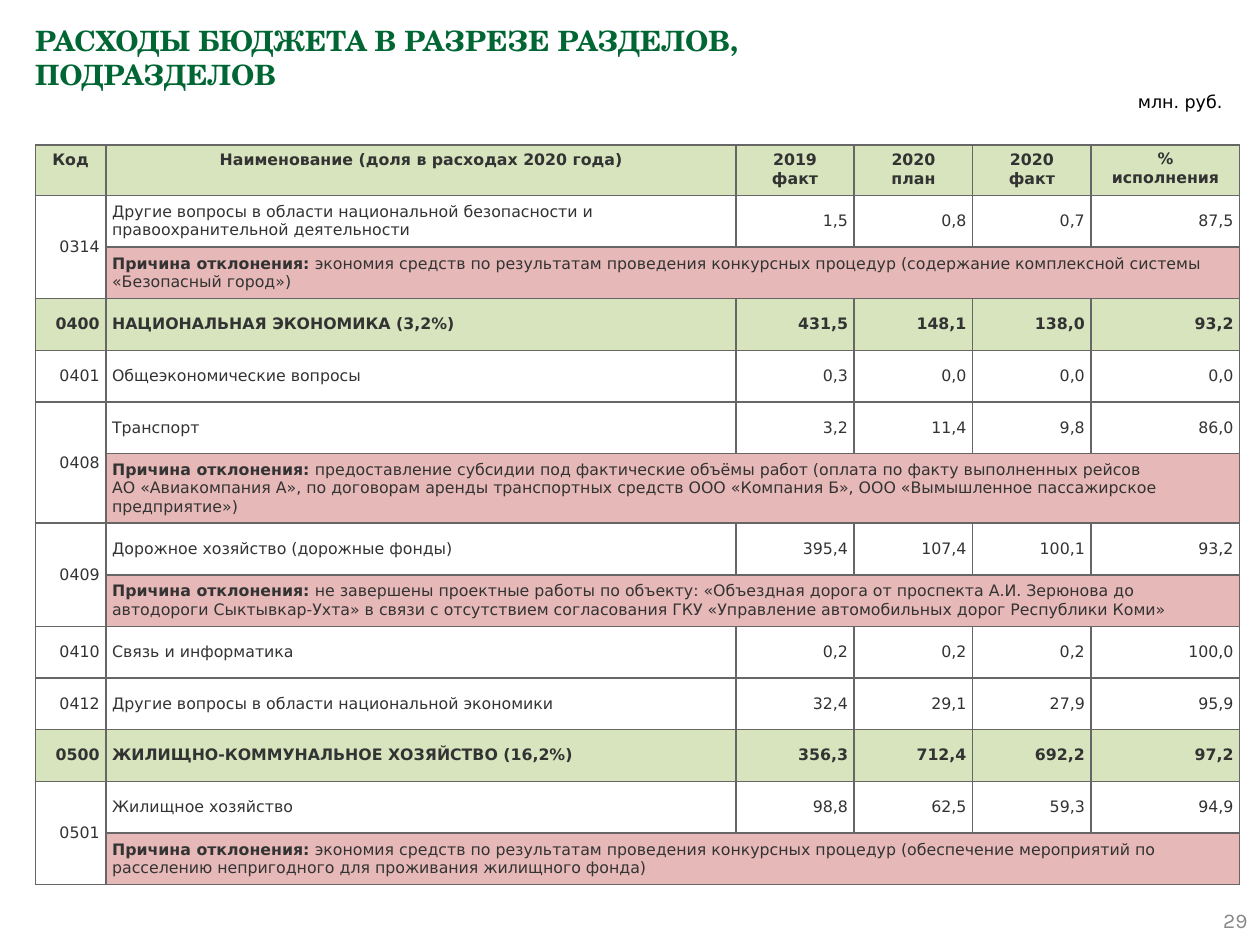
from lxml.etree import SubElement
from pptx import Presentation
from pptx.dml.color import RGBColor
from pptx.enum.shapes import MSO_SHAPE
from pptx.enum.text import MSO_ANCHOR, PP_ALIGN
from pptx.oxml.ns import qn
from pptx.util import Inches, Pt

# Content
TITLE = "РАСХОДЫ БЮДЖЕТА В РАЗРЕЗЕ РАЗДЕЛОВ, ПОДРАЗДЕЛОВ"
UNIT = "млн. руб."
PAGE_NUMBER = "29"
HEADERS = ["Код", "Наименование (доля в расходах 2020 года)",
           "2019\nфакт", "2020\nплан", "2020\nфакт", "%\nисполнения"]
REASON_LABEL = "Причина отклонения: "

# Kind of row, cells, reason for the deviation
ENTRIES = [
    ("item", ["0314", "Другие вопросы в области национальной безопасности и "
              "правоохранительной деятельности", "1,5", "0,8", "0,7", "87,5"],
     "экономия средств по результатам проведения конкурсных процедур "
     "(содержание комплексной системы «Безопасный город»)"),
    ("section", ["0400", "НАЦИОНАЛЬНАЯ ЭКОНОМИКА (3,2%)",
                 "431,5", "148,1", "138,0", "93,2"], None),
    ("item", ["0401", "Общеэкономические вопросы", "0,3", "0,0", "0,0", "0,0"], None),
    ("item", ["0408", "Транспорт", "3,2", "11,4", "9,8", "86,0"],
     "предоставление субсидии под фактические объёмы работ "
     "(оплата по факту выполненных рейсов\n"
     "АО «Авиакомпания А», по договорам аренды транспортных средств "
     "ООО «Компания Б», ООО «Вымышленное пассажирское предприятие»)"),
    ("item", ["0409", "Дорожное хозяйство (дорожные фонды)",
              "395,4", "107,4", "100,1", "93,2"],
     "не завершены проектные работы по объекту: «Объездная дорога от проспекта "
     "А.И. Зерюнова до автодороги Сыктывкар-Ухта» в связи с отсутствием "
     "согласования ГКУ «Управление автомобильных дорог Республики Коми»"),
    ("item", ["0410", "Связь и информатика", "0,2", "0,2", "0,2", "100,0"], None),
    ("item", ["0412", "Другие вопросы в области национальной экономики",
              "32,4", "29,1", "27,9", "95,9"], None),
    ("section", ["0500", "ЖИЛИЩНО-КОММУНАЛЬНОЕ ХОЗЯЙСТВО (16,2%)",
                 "356,3", "712,4", "692,2", "97,2"], None),
    ("item", ["0501", "Жилищное хозяйство", "98,8", "62,5", "59,3", "94,9"],
     "экономия средств по результатам проведения конкурсных процедур "
     "(обеспечение мероприятий по расселению непригодного для проживания "
     "жилищного фонда)"),
]

# Theme: text styles are font, size, colour
THEME = {
    "title": ("TeX Gyre Schola", 16, "006633"),
    "table": ("DejaVu Sans", 9, "333333"),
    "unit": ("DejaVu Sans", 10, "000000"),
    "page": ("Karla", 12, "898989"),
    "green": "D7E4BD",
    "pink": "E6B9B8",
    "border": "666666",
}

COLUMN_WIDTHS = [0.56, 5, 0.94, 0.94, 0.94, 1.18]
HEADER_HEIGHT, ROW_HEIGHT = 0.3, 0.41
CELL_INSET = 0.05


def style_run(run, style, bold=False):
    font = run.font
    font.name, size, color = THEME[style]
    font.size = Pt(size)
    font.color.rgb = RGBColor.from_string(color)
    font.bold = bold


def write(text_frame, text, style, align=PP_ALIGN.LEFT, bold=False):
    text_frame.text = text
    for paragraph in text_frame.paragraphs:
        paragraph.alignment = align
        for run in paragraph.runs:
            style_run(run, style, bold)


def add_text(slide, box, text, style, align, anchor, bold=False):
    frame = slide.shapes.add_textbox(*map(Inches, box)).text_frame
    frame.word_wrap = True
    frame.vertical_anchor = anchor
    write(frame, text, style, align, bold)


def format_cell(cell, fill=None, anchor=MSO_ANCHOR.MIDDLE):
    properties = cell._tc.get_or_add_tcPr()
    for side in ("lnL", "lnR", "lnT", "lnB"):
        line = SubElement(properties, qn(f"a:{side}"), w=str(Pt(1)))
        solid = SubElement(line, qn("a:solidFill"))
        SubElement(solid, qn("a:srgbClr"), val=THEME["border"])
    if fill:
        cell.fill.solid()
        cell.fill.fore_color.rgb = RGBColor.from_string(THEME[fill])
    else:
        cell.fill.background()
    cell.vertical_anchor = anchor
    cell.margin_left = cell.margin_right = Inches(CELL_INSET)
    cell.margin_top = cell.margin_bottom = Inches(CELL_INSET)


def fill_entry(table, row, kind, values, reason):
    """Write one budget line and return the next free row."""
    section = kind == "section"
    for column, value in enumerate(values):
        cell = table.cell(row, column)
        format_cell(cell, "green" if section else None)
        align = PP_ALIGN.LEFT if column == 1 else PP_ALIGN.RIGHT
        write(cell.text_frame, value, "table", align, section)
    if not reason:
        return row + 1

    # Reason row: the code cell spans down, the reason spans across
    for column in range(len(values)):
        format_cell(table.cell(row + 1, column), "pink" if column else None)
    table.cell(row, 0).merge(table.cell(row + 1, 0))
    cell = table.cell(row + 1, 1)
    cell.merge(table.cell(row + 1, len(values) - 1))
    write(cell.text_frame, REASON_LABEL + reason, "table")
    label = cell.text_frame.paragraphs[0].runs[0]
    label.text = REASON_LABEL
    label.font.bold = True
    body = cell.text_frame.paragraphs[0].add_run()
    body.text = reason.split("\n")[0]
    style_run(body, "table")
    return row + 2


def add_budget_table(slide):
    row_count = 1 + sum(2 if reason else 1 for _, _, reason in ENTRIES)
    height = HEADER_HEIGHT + ROW_HEIGHT * (row_count - 1)
    table = slide.shapes.add_table(
        row_count, len(HEADERS), Inches(0.28), Inches(1.15),
        Inches(sum(COLUMN_WIDTHS)), Inches(height)).table
    table.first_row = table.horz_banding = False
    for column, width in zip(table.columns, COLUMN_WIDTHS):
        column.width = Inches(width)
    for index, row in enumerate(table.rows):
        row.height = Inches(ROW_HEIGHT if index else HEADER_HEIGHT)

    # Header row; the last cell has tighter margins
    for column, text in enumerate(HEADERS):
        cell = table.cell(0, column)
        format_cell(cell, "green", MSO_ANCHOR.TOP)
        write(cell.text_frame, text, "table", PP_ALIGN.CENTER, True)
    cell.margin_left = cell.margin_right = Inches(0.02)
    cell.margin_top = cell.margin_bottom = Inches(0.04)

    row = 1
    for entry in ENTRIES:
        row = fill_entry(table, row, *entry)


def add_unit_label(slide):
    shape = slide.shapes.add_shape(
        MSO_SHAPE.PENTAGON, Inches(8.56), Inches(0.7), Inches(1.24), Inches(0.21))
    shape.adjustments[0] = 0
    shape.shadow.inherit = False
    shape.fill.background()
    shape.line.fill.background()
    shape.text_frame.vertical_anchor = MSO_ANCHOR.MIDDLE
    write(shape.text_frame, UNIT, "unit", PP_ALIGN.RIGHT)


def main():
    presentation = Presentation()
    presentation.slide_width, presentation.slide_height = Inches(10), Inches(7.5)
    slide = presentation.slides.add_slide(presentation.slide_layouts[6])
    add_text(slide, (0.18, 0.14, 6.02, 1.15), TITLE, "title",
             PP_ALIGN.LEFT, MSO_ANCHOR.TOP, bold=True)
    add_budget_table(slide)
    add_unit_label(slide)
    add_text(slide, (7.67, 7.1, 2.33, 0.4), PAGE_NUMBER, "page",
             PP_ALIGN.RIGHT, MSO_ANCHOR.MIDDLE)
    presentation.save("out.pptx")


if __name__ == "__main__":
    main()
